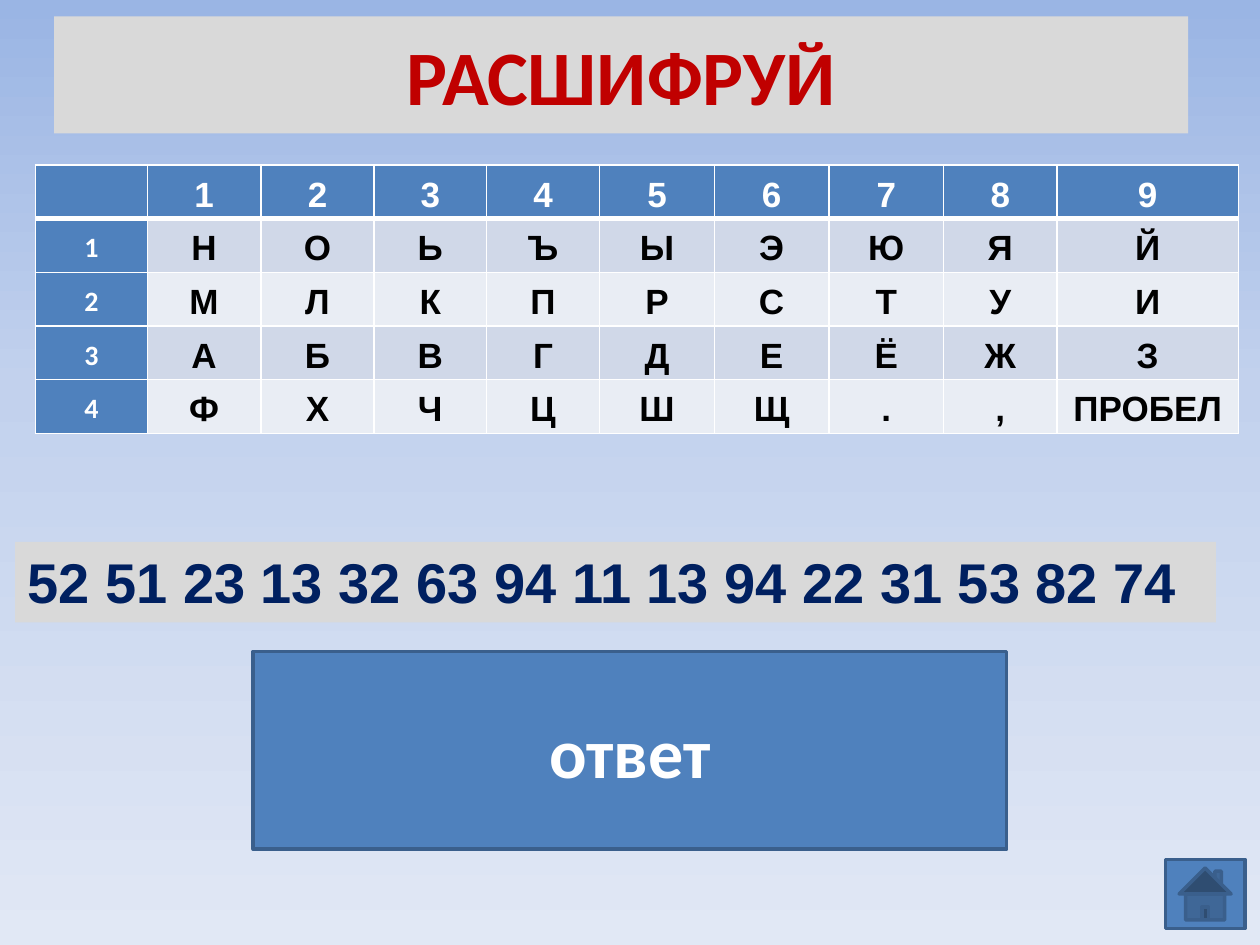
import copy

import pptx
import pptx.dml.color
import pptx.enum.shapes
import pptx.enum.text
import pptx.oxml
import pptx.oxml.ns
import pptx.util

RGBColor = pptx.dml.color.RGBColor
Inches = pptx.util.Inches
Pt = pptx.util.Pt
qn = pptx.oxml.ns.qn
MSO_SHAPE = pptx.enum.shapes.MSO_SHAPE
PP_ALIGN = pptx.enum.text.PP_ALIGN
MIDDLE = pptx.enum.text.MSO_ANCHOR.MIDDLE
TOP = pptx.enum.text.MSO_ANCHOR.TOP

WHITE = RGBColor(0xFF, 0xFF, 0xFF)
BLACK = RGBColor(0x00, 0x00, 0x00)
GREY = RGBColor(0xD9, 0xD9, 0xD9)
RED = RGBColor(0xC0, 0x00, 0x00)
NAVY = RGBColor(0x00, 0x20, 0x60)
BLUE = RGBColor(0x4F, 0x81, 0xBD)
DARK_BLUE = RGBColor(0x3A, 0x5F, 0x8C)
ODD_ROW = RGBColor(0xD0, 0xD8, 0xE8)
EVEN_ROW = RGBColor(0xE9, 0xED, 0xF4)
SKY = [
    (0, RGBColor(0x9A, 0xB5, 0xE4)),
    (0.41, RGBColor(0xC2, 0xD1, 0xED)),
    (1, RGBColor(0xE1, 0xE8, 0xF5)),
]

CIPHER = [
    ["", *"123456789"],
    ["1", *"НОЬЪЫЭЮЯЙ"],
    ["2", *"МЛКПРСТУИ"],
    ["3", *"АБВГДЕЁЖЗ"],
    ["4", *"ФХЧЦШЩ.,", "ПРОБЕЛ"],
]


class SlideBuilder:
    """Draws elements in the style of the slide it holds."""

    def __init__(self, slide):
        self.slide = slide

    def background(self, stops):
        fill = self.slide.background.fill
        fill.gradient()
        fill.gradient_angle = 270
        # A fresh gradient has two stops; the middle one is added
        stop_list = self.slide.element.find(".//" + qn("a:gsLst"))
        stop_list.insert(1, copy.deepcopy(stop_list[0]))
        for stop, (position, color) in zip(fill.gradient_stops, stops):
            stop.position = position
            stop.color.rgb = color

    def label(self, frame, text, size, font, color, align=PP_ALIGN.CENTER,
              spacing=None):
        paragraph = frame.paragraphs[0]
        paragraph.alignment = align
        paragraph.line_spacing = spacing
        run = paragraph.add_run()
        run.text = text
        run.font.color.rgb = color
        formats = {"size": Pt(size), "name": font, "bold": True}
        for name, value in formats.items():
            setattr(run.font, name, value)

    def panel(self, box, fill, outline=None, kind=MSO_SHAPE.RECTANGLE,
              anchor=MIDDLE):
        shape = self.slide.shapes.add_shape(kind, *map(Inches, box))
        shape.shadow.inherit = False
        shape.fill.solid()
        shape.fill.fore_color.rgb = fill
        if outline is None:
            shape.line.fill.background()
        else:
            shape.line.color.rgb = outline
            shape.line.width = Pt(2)
        shape.text_frame.word_wrap = True
        shape.text_frame.vertical_anchor = anchor
        return shape.text_frame

    def borders(self, cell, widths):
        properties = cell._tc.get_or_add_tcPr()
        for index, (side, width) in enumerate(widths.items()):
            line = pptx.oxml.parse_xml(
                f'<a:ln{side} {pptx.oxml.ns.nsdecls("a")} w="{Pt(width)}">'
                f'<a:solidFill><a:srgbClr val="{WHITE}"/></a:solidFill>'
                f'</a:ln{side}>')
            properties.insert(index, line)

    def cell(self, cell, text, fill, size, font, color):
        cell.fill.solid()
        cell.fill.fore_color.rgb = fill
        formats = {
            "margin_left": Inches(0.07), "margin_right": Inches(0.07),
            "margin_top": 0, "margin_bottom": 0, "vertical_anchor": MIDDLE,
        }
        for name, value in formats.items():
            setattr(cell, name, value)
        if text:
            self.label(cell.text_frame, text, size, font, color, spacing=1.15)

    def cipher_table(self, box, rows, widths):
        table = self.slide.shapes.add_table(
            len(rows), len(widths), *map(Inches, box)).table
        for column, width in zip(table.columns, widths):
            column.width = Inches(width)
        for r, row in enumerate(rows):
            for c, text in enumerate(row):
                if r == 0:
                    style = (BLUE, 20, "Arial", WHITE)
                elif c == 0:
                    style = (BLUE, 16, "Calibri", WHITE)
                else:
                    style = (ODD_ROW if r % 2 else EVEN_ROW, 20, "Arial", BLACK)
                cell = table.cell(r, c)
                self.cell(cell, text, *style)
                self.borders(cell, {"L": 1, "R": 1, "T": 3 if r == 1 else 1,
                                    "B": 3 if r == 0 else 1})


def main():
    deck = pptx.Presentation()
    deck.slide_width, deck.slide_height = Inches(10), Inches(7.5)
    builder = SlideBuilder(deck.slides.add_slide(deck.slide_layouts[6]))
    builder.background(SKY)

    # Title
    title = builder.panel((0.43, 0.13, 9, 0.93), GREY)
    builder.label(title, "РАСШИФРУЙ", 44, "Calibri", RED)

    # Cipher key
    widths = [0.89, 0.9, 0.9, 0.89, 0.9, 0.91, 0.91, 0.91, 0.9, 1.44]
    builder.cipher_table((0.28, 1.31, 9.53, 2.13), CIPHER, widths)

    # Encoded message
    message = builder.panel((0.12, 4.3, 9.53, 0.64), GREY, anchor=TOP)
    builder.label(message, "52 51 23 13 32 63 94 11 13 94 22 31 53 82 74",
                  32, "Arial", NAVY, PP_ALIGN.LEFT)

    # Answer cover
    answer = builder.panel((2.01, 5.17, 5.98, 1.57), BLUE, DARK_BLUE)
    builder.label(answer, "ответ", 40, "Calibri", WHITE)

    # Home button
    builder.panel((9.25, 6.82, 0.63, 0.55), BLUE, DARK_BLUE,
                  MSO_SHAPE.ACTION_BUTTON_HOME)

    deck.save("out.pptx")


if __name__ == "__main__":
    main()
